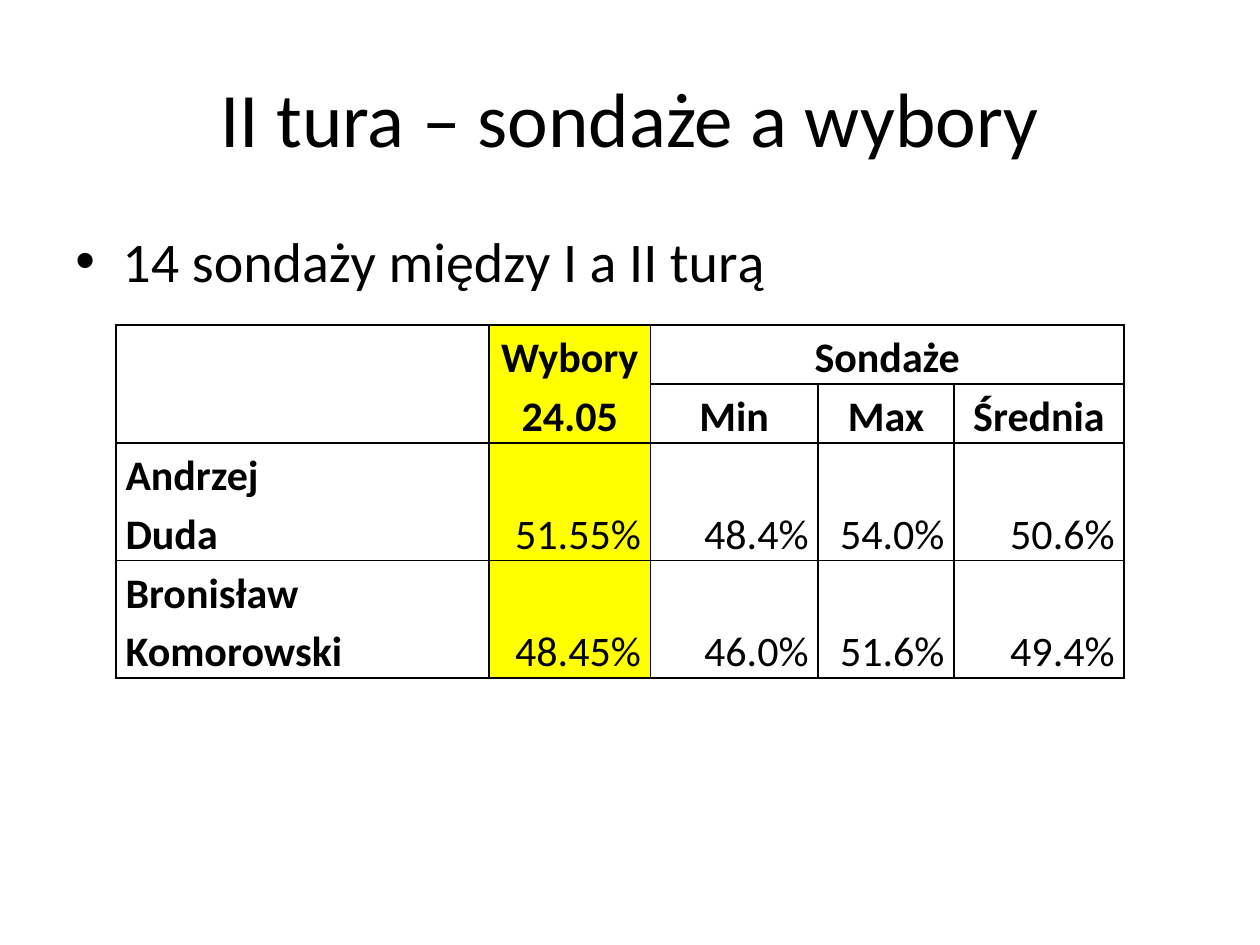
from lxml import etree
from pptx import Presentation
from pptx.dml.color import RGBColor
from pptx.enum.text import MSO_ANCHOR, PP_ALIGN
from pptx.oxml.ns import qn
from pptx.util import Cm, Pt

LEFT, CENTER, RIGHT = PP_ALIGN.LEFT, PP_ALIGN.CENTER, PP_ALIGN.RIGHT
TOP, MIDDLE, BOTTOM = MSO_ANCHOR.TOP, MSO_ANCHOR.MIDDLE, MSO_ANCHOR.BOTTOM

HEADER_ROWS = 2
ELECTION_COL = 1
COL_WIDTHS = [7.52, 3.25, 3.38, 2.74, 3.43]
ROW_HEIGHTS = [1.19, 1.19, 2.37, 2.37]
ROWS = [
    ["", "Wybory", "Sondaże", "", ""],
    ["", "24.05", "Min", "Max", "Średnia"],
    ["Andrzej \vDuda", "51.55%", "48.4%", "54.0%", "50.6%"],
    ["Bronisław Komorowski", "48.45%", "46.0%", "51.6%", "49.4%"],
]


def rgb(color):
    return RGBColor.from_string(color)


class Deck:
    font = "Calibri"
    ink = "000000"
    highlight = "FFFF00"

    def __init__(self, width, height):
        self.prs = Presentation()
        self.prs.slide_width, self.prs.slide_height = Cm(width), Cm(height)
        self.s = self.prs.slides.add_slide(self.prs.slide_layouts[6])

    def style(self, p, size, bold=False, align=LEFT):
        p.alignment = align
        for r in p.runs:
            r.font.name, r.font.size, r.font.bold = self.font, Pt(size), bold
            r.font.color.rgb = rgb(self.ink)

    def text(self, text, x, y, w, h, size, align=LEFT, anchor=TOP):
        tf = self.s.shapes.add_textbox(Cm(x), Cm(y), Cm(w), Cm(h)).text_frame
        tf.word_wrap = True
        tf.vertical_anchor = anchor
        tf.text = text
        p = tf.paragraphs[0]
        self.style(p, size, align=align)
        return p

    def bullet(self, text, x, y, w, h, size):
        p = self.text(text, x, y, w, h, size)
        p.space_before = Pt(size * 0.2)
        pPr = p._p.get_or_add_pPr()
        pPr.set("marL", str(Cm(0.95)))
        pPr.set("indent", str(Cm(-0.95)))
        etree.SubElement(pPr, qn("a:buFont")).set("typeface", "Arial")
        etree.SubElement(pPr, qn("a:buChar")).set("char", "•")

    def borders(self, cell, hidden):
        tcPr = cell._tc.get_or_add_tcPr()
        for i, side in enumerate("LRTB"):
            ln = etree.Element(qn(f"a:ln{side}"), w=str(Pt(1)))
            if side in hidden:
                etree.SubElement(ln, qn("a:noFill"))
            else:
                fill = etree.SubElement(ln, qn("a:solidFill"))
                etree.SubElement(fill, qn("a:srgbClr")).set("val", self.ink)
            tcPr.insert(i, ln)

    def cell(self, cell, text, bold, align, fill, hidden):
        if fill:
            cell.fill.solid()
            cell.fill.fore_color.rgb = rgb(fill)
        else:
            cell.fill.background()
        self.borders(cell, hidden)
        if text:
            cell.margin_left = cell.margin_right = Cm(0.19)
            cell.margin_top = cell.margin_bottom = 0
            cell.vertical_anchor = BOTTOM
            cell.text = text
            p = cell.text_frame.paragraphs[0]
            p.line_spacing = 1.15
            self.style(p, 24, bold, align)

    def table(self, rows, x, y, widths, heights):
        tbl = self.s.shapes.add_table(
            len(rows), len(widths), Cm(x), Cm(y),
            Cm(sum(widths)), Cm(sum(heights))).table
        tbl.first_row = tbl.horz_banding = False
        for col, w in zip(tbl.columns, widths):
            col.width = Cm(w)
        for row, h in zip(tbl.rows, heights):
            row.height = Cm(h)
        for i, row in enumerate(rows):
            header = i < HEADER_ROWS
            for j, text in enumerate(row):
                align = CENTER if header else RIGHT if j else LEFT
                fill = self.highlight if j == ELECTION_COL else None
                open_side = "BT"[i] if header and j <= ELECTION_COL else ""
                self.cell(tbl.cell(i, j), text, header or j == 0, align,
                          fill, open_side)
        tbl.cell(0, 2).merge(tbl.cell(0, 4))


def main():
    deck = Deck(25.4, 19.05)
    deck.text("II tura – sondaże a wybory", 1.27, 0.76, 22.86, 3.18, 44,
              CENTER, MIDDLE)
    deck.table(ROWS, 2.34, 6.55, COL_WIDTHS, ROW_HEIGHTS)
    deck.bullet("14 sondaży między I a II turą", 1.27, 4.45, 22.86, 1.9, 32)
    deck.prs.save("out.pptx")


if __name__ == "__main__":
    main()
